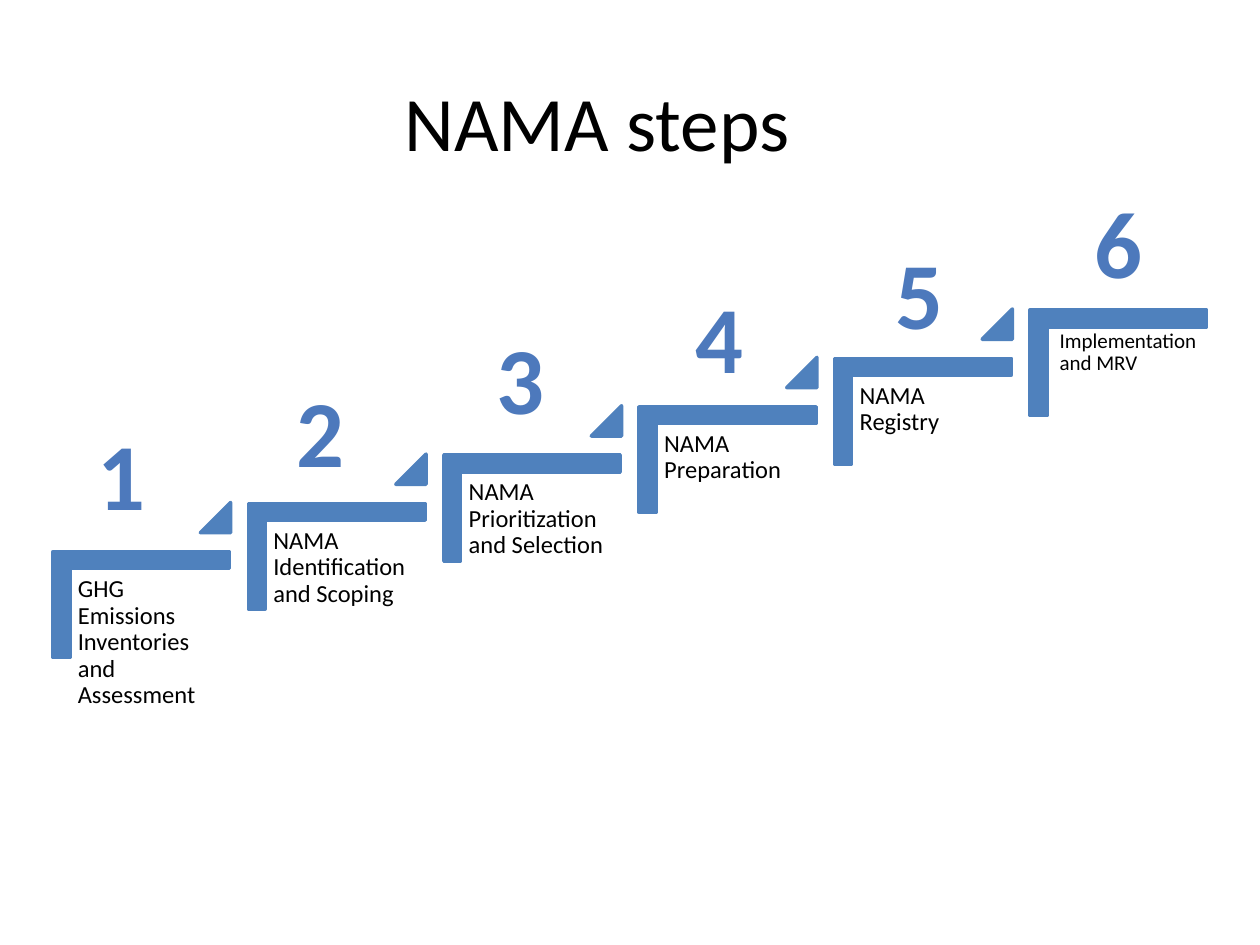
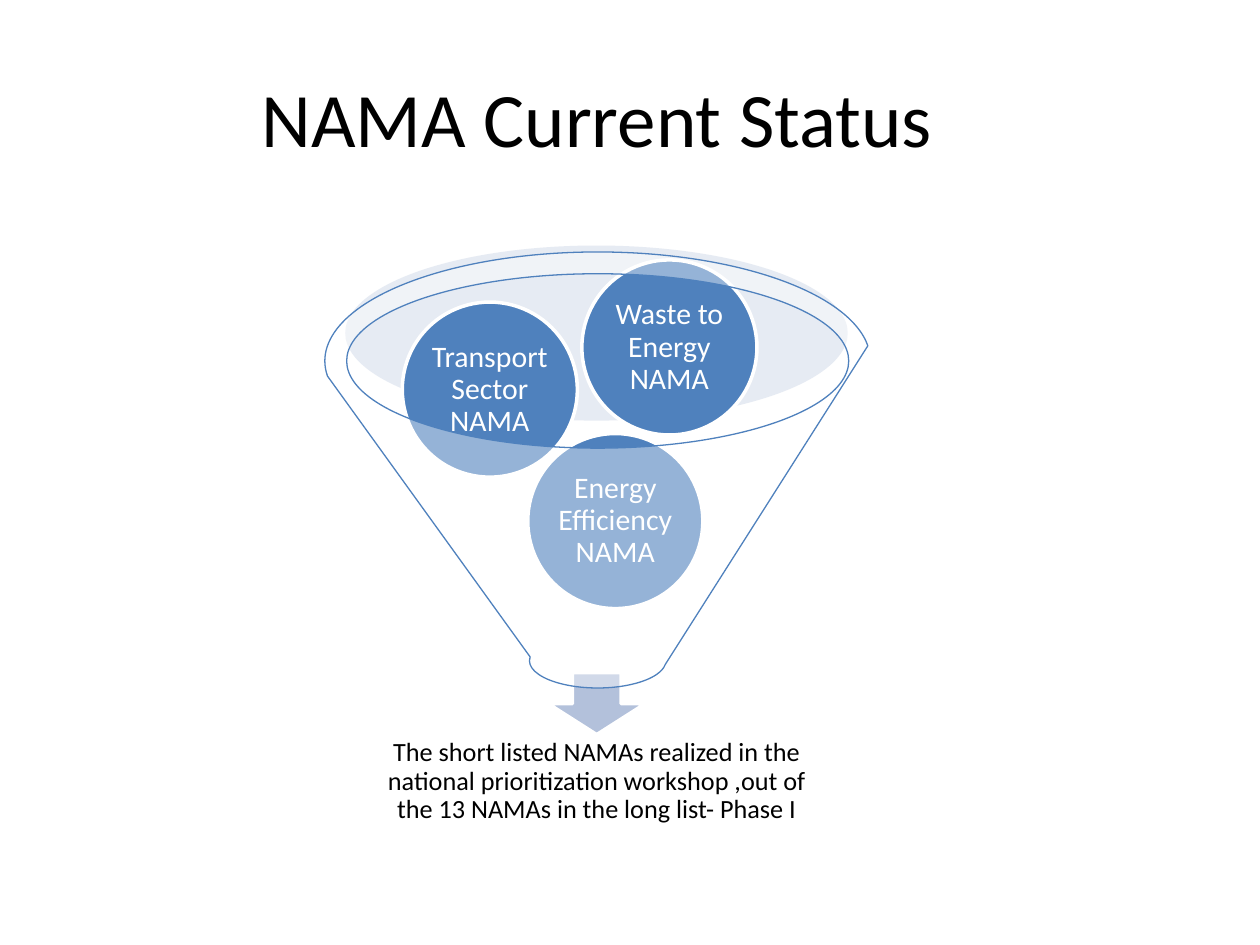
from lxml.etree import SubElement
from pptx import Presentation
from pptx.dml.color import RGBColor
from pptx.enum.shapes import MSO_SHAPE
from pptx.enum.text import MSO_ANCHOR, PP_ALIGN
from pptx.oxml.ns import qn
from pptx.util import Cm, Pt

# Content
STEPS = [  # label, top of the number in cm
    ("GHG Emissions Inventories and Assessment", 8.26),
    ("NAMA Identification and Scoping", 7.39),
    ("NAMA Prioritization and Selection", 6.32),
    ("NAMA Preparation", 5.51),
    ("NAMA Registry", 4.62),
    ("Implementation and MRV", 3.58),
]
BALLS = [  # label, left and top in cm
    ("Energy Efficiency NAMA", 10.64, 8.74),
    ("Transport Sector NAMA", 8.11, 6.09),
    ("Waste to Energy NAMA", 11.73, 5.24),
]
RESULT = ("The short listed NAMAs realized in the national prioritization "
          "workshop ,out of the 13 NAMAs in the long list- Phase I")

# Shared style
FONT = "Calibri"
BLACK = RGBColor(0x00, 0x00, 0x00)
WHITE = RGBColor(0xFF, 0xFF, 0xFF)
BLUE = RGBColor(0x4F, 0x81, 0xBD)
DIGIT = RGBColor(0x4D, 0x79, 0xBC)
PALE = RGBColor(0xC2, 0xCD, 0xE1)
ARROW = RGBColor(0xB3, 0xC1, 0xDB)


def add_text(slide, text, box, size, color=BLACK, inset=None, align=PP_ALIGN.CENTER,
             anchor=MSO_ANCHOR.MIDDLE, space=0.9, bold=False, wrap=True):
    frame = slide.shapes.add_textbox(*map(Cm, box)).text_frame
    frame.word_wrap = wrap
    frame.vertical_anchor = anchor
    if inset is not None:
        frame.margin_left = frame.margin_right = Cm(inset)
        frame.margin_top = frame.margin_bottom = Cm(inset)
    para = frame.paragraphs[0]
    para.alignment = align
    para.line_spacing = space
    run = para.add_run()
    run.text = text
    run.font.name = FONT
    run.font.size = Pt(size)
    run.font.bold = bold
    run.font.color.rgb = color


def add_form(slide, kind, box, fill, line=None, width=2, alpha=None):
    form = slide.shapes.add_shape(kind, *map(Cm, box))
    form.shadow.inherit = False
    form.fill.solid()
    form.fill.fore_color.rgb = fill
    if alpha is not None:
        color = form.fill._xPr.find(qn("a:solidFill"))[0]
        SubElement(color, qn("a:alpha"), val=str(alpha * 1000))
    if line is None:
        form.line.fill.background()
    else:
        form.line.color.rgb = line
        form.line.width = Pt(width)
    return form


def add_slide(deck, title, top):
    slide = deck.slides.add_slide(deck.slide_layouts[6])
    add_text(slide, title, (1.27, top, 21.54, 3.18), 44, space=1)
    return slide


def draw_steps(deck):
    slide = add_slide(deck, "NAMA steps", 0.84)
    last = len(STEPS) - 1
    for i, (label, top) in enumerate(STEPS):
        x, y = 1.78 + 3.94 * i, 10.41 - 0.975 * i

        # Stair
        stair = add_form(slide, MSO_SHAPE.CORNER, (x, y, 2.13, 3.56), BLUE, BLUE)
        stair.rotation = 90
        stair.adjustments[0] = stair.adjustments[1] = 0.16

        # Label, smaller on the last stair, and rise marker on the others
        if i == last:
            box, size, inset = (x - 0.25, y + 0.99, 3.12, 2.82), 12, 0.13
        else:
            box, size, inset = (x - 0.36, y + 1.06, 3.23, 2.82), 14, 0.15
            rise = add_form(slide, MSO_SHAPE.ISOSCELES_TRIANGLE,
                            (x + 2.26, y - 0.28, 0.61, 0.61), BLUE, BLUE)
            rise.adjustments[0] = 1
        add_text(slide, label, box, size, inset=inset,
                 align=PP_ALIGN.LEFT, anchor=MSO_ANCHOR.TOP)

        # Number
        add_text(slide, str(i + 1), (1.7 + 4.02 * i, top, 1.5, 2.57), 54, DIGIT,
                 anchor=MSO_ANCHOR.TOP, space=1, bold=True, wrap=False)


def draw_status(deck):
    slide = add_slide(deck, "NAMA Current Status", 0.76)

    # Funnel mouth, arrow and result
    add_form(slide, MSO_SHAPE.OVAL, (6.96, 4.95, 10.13, 3.53), PALE, alpha=40)
    add_form(slide, MSO_SHAPE.DOWN_ARROW, (11.05, 13.56, 1.96, 1.25), ARROW, WHITE)
    add_text(slide, RESULT, (7.32, 14.58, 9.42, 2.36), 15, inset=0.3)

    # Balls, each with its label centred
    ball, core = 3.53, 2.49
    gap = (ball - core) / 2
    for label, x, y in BALLS:
        add_form(slide, MSO_SHAPE.OVAL, (x, y, ball, ball), BLUE, WHITE)
        add_text(slide, label, (x + gap, y + gap, core, core), 17, WHITE, inset=0.05)

    # Funnel over the balls
    add_form(slide, MSO_SHAPE.FUNNEL, (6.55, 5.08, 11, 8.79), WHITE, BLUE, 0.75, 40)


def main():
    deck = Presentation()
    deck.slide_width, deck.slide_height = Cm(25.4), Cm(19.05)
    draw_steps(deck)
    draw_status(deck)
    deck.save("out.pptx")


if __name__ == "__main__":
    main()
